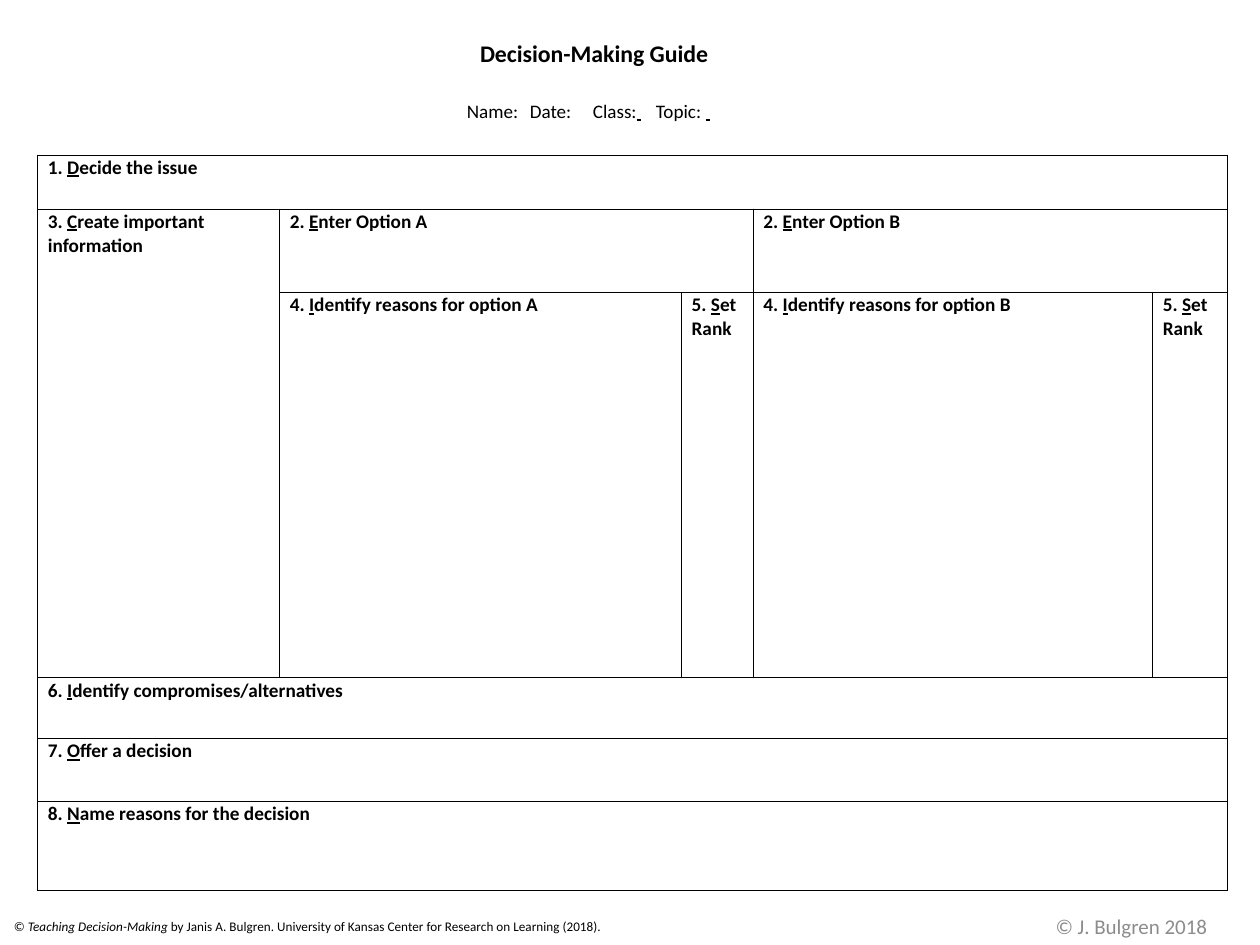
"""Build a one-page decision-making guide worksheet."""
from lxml import etree
from pptx import Presentation
from pptx.dml.color import RGBColor
from pptx.enum.text import MSO_ANCHOR, MSO_AUTO_SIZE, PP_ALIGN
from pptx.oxml.ns import qn
from pptx.util import Inches, Pt

CENTER, LEFT = PP_ALIGN.CENTER, PP_ALIGN.LEFT
MIDDLE, TOP = MSO_ANCHOR.MIDDLE, MSO_ANCHOR.TOP
GROW, FIXED = MSO_AUTO_SIZE.SHAPE_TO_FIT_TEXT, MSO_AUTO_SIZE.NONE
BLACK, GRAY = RGBColor(0, 0, 0), RGBColor(0x8C, 0x8C, 0x8C)
FONT = "Calibri"
WIDTH, HEIGHT = Inches(10), Inches(7.5)

TITLE = [("Decision-Making Guide", "")]
FIELDS = [("Name:", ""), ("\t", "u"), ("Date:", ""), ("\t", "u"),
          ("Class:", ""), (" \t", "u"), ("Topic: ", ""), (" \t", "u")]
FIELD_TABS = [2.86, 4.02, 6.01, 8.16]
CREDIT = [("© ", ""), ("Teaching Decision-Making", "i"),
          (" by Janis A. Bulgren. University of Kansas Center for Research on Learning (2018).", "")]
COPYRIGHT = [("© J. Bulgren 2018", "")]

HEADER_AREA = (3, 4, 88.1, 8.93)
GUIDE_CORNER = (3, 16.4)
CREDIT_AREA = (1, 97.07, 49.5, 1.87)
COPYRIGHT_AREA = (80.6, 95.33, 18.4, 5.33)
COLUMN_SHARES = [19.2, 31.9, 5.7, 31.7, 5.9]
ROW_SHARES = [5.73, 8.8, 40.8, 6.4, 6.67, 9.47]

STEPS = [
    (0, 0, 1, 5, ["1. Decide the issue"]),
    (1, 0, 2, 1, ["3. Create important", "information"]),
    (1, 1, 1, 2, ["2. Enter Option A"]),
    (1, 3, 1, 2, ["2. Enter Option B"]),
    (2, 1, 1, 1, ["4. Identify reasons for option A"]),
    (2, 2, 1, 1, ["5. Set", "Rank"]),
    (2, 3, 1, 1, ["4. Identify reasons for option B"]),
    (2, 4, 1, 1, ["5. Set", "Rank"]),
    (3, 0, 1, 5, ["6. Identify compromises/alternatives"]),
    (4, 0, 1, 5, ["7. Offer a decision"]),
    (5, 0, 1, 5, ["8. Name reasons for the decision"]),
]


def across(share):
    return int(WIDTH * share / 100)


def down(share):
    return int(HEIGHT * share / 100)


def write(paragraph, runs, size=11, bold=False, color=BLACK, align=LEFT,
          indent=0, before=0, line=None, tabs=()):
    properties = paragraph._p.get_or_add_pPr()
    properties.set("marL", str(Inches(indent)))
    properties.set("indent", "0")
    if tabs:
        stops = etree.SubElement(properties, qn("a:tabLst"))
        for stop in tabs:
            etree.SubElement(stops, qn("a:tab"), pos=str(Inches(stop)), algn="l")
    paragraph.alignment = align
    paragraph.space_before = Pt(before)
    if line:
        paragraph.line_spacing = Pt(line)
    for words, style in runs:
        run = paragraph.add_run()
        run.text = words
        font = run.font
        font.name, font.size, font.bold = FONT, Pt(size), bold
        font.underline, font.italic = style == "u", style == "i"
        font.color.rgb = color


def add_frame(slide, area, anchor=TOP, tight=True):
    left, top, width, height = area
    frame = slide.shapes.add_textbox(across(left), down(top), across(width), down(height)).text_frame
    frame.word_wrap = True
    frame.vertical_anchor = anchor
    frame.auto_size = GROW if tight else FIXED
    if tight:
        frame.margin_left = frame.margin_right = frame.margin_bottom = 0
        frame.margin_top = Inches(0.01)
    return frame


def outline(cell):
    properties = cell._tc.get_or_add_tcPr()
    for side in ("lnL", "lnR", "lnT", "lnB"):
        border = etree.SubElement(properties, qn("a:" + side), w=str(Pt(0.5)))
        fill = etree.SubElement(border, qn("a:solidFill"))
        etree.SubElement(fill, qn("a:srgbClr"), val=str(BLACK))
    cell.fill.background()
    cell.margin_left = cell.margin_right = cell.margin_top = cell.margin_bottom = 0


def add_guide(slide):
    left, top = GUIDE_CORNER
    guide = slide.shapes.add_table(
        len(ROW_SHARES), len(COLUMN_SHARES), across(left), down(top),
        across(sum(COLUMN_SHARES)), down(sum(ROW_SHARES))).table
    guide.first_row = guide.horz_banding = False
    for column, share in zip(guide.columns, COLUMN_SHARES):
        column.width = across(share)
    for row, share in zip(guide.rows, ROW_SHARES):
        row.height = down(share)
    for cell in guide.iter_cells():
        outline(cell)
    for row, column, deep, wide, (heading, *more) in STEPS:
        cell = guide.cell(row, column)
        if deep * wide > 1:
            cell.merge(guide.cell(row + deep - 1, column + wide - 1))
        frame = cell.text_frame
        initial = [(heading[:3], ""), (heading[3], "u"), (heading[4:], "")]
        write(frame.paragraphs[0], initial, bold=True, indent=0.08, line=14.1)
        for words in more:
            write(frame.add_paragraph(), [(words, "")], bold=True, indent=0.08, before=0.3)


def main():
    deck = Presentation()
    deck.slide_width, deck.slide_height = WIDTH, HEIGHT
    slide = deck.slides.add_slide(deck.slide_layouts[6])
    header = add_frame(slide, HEADER_AREA)
    write(header.paragraphs[0], TITLE, size=13.6, bold=True, align=CENTER, indent=0.02)
    write(header.add_paragraph(), FIELDS, size=10.9, align=CENTER, before=18, tabs=FIELD_TABS)
    add_guide(slide)
    write(add_frame(slide, CREDIT_AREA).paragraphs[0], CREDIT, size=7.5, indent=0.01)
    write(add_frame(slide, COPYRIGHT_AREA, anchor=MIDDLE, tight=False).paragraphs[0],
          COPYRIGHT, size=12, color=GRAY, align=CENTER)
    deck.save("out.pptx")


if __name__ == "__main__":
    main()
